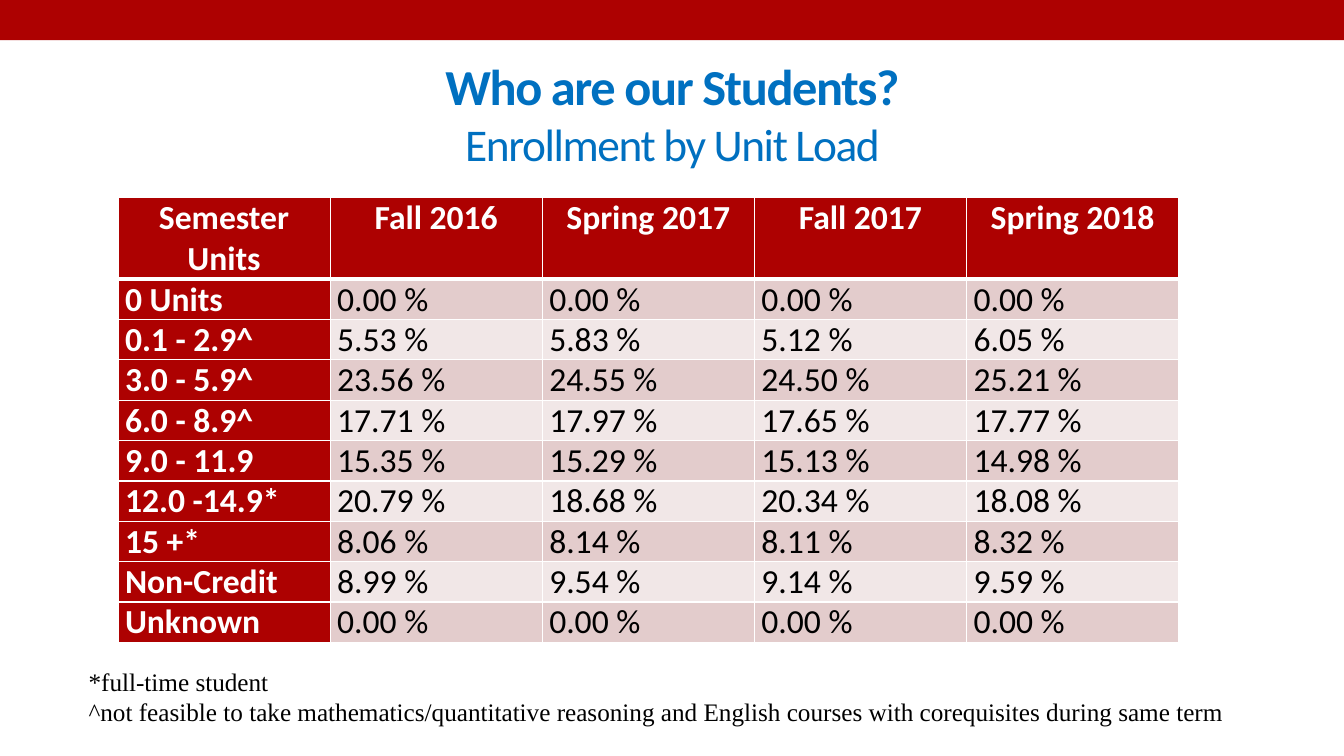
import pptx
import pptx.dml.color
import pptx.enum.shapes
import pptx.enum.text
import pptx.oxml.ns
import pptx.util
from lxml import etree

Inches = pptx.util.Inches
ALIGN = pptx.enum.text.PP_ALIGN
ANCHOR = pptx.enum.text.MSO_ANCHOR

RED, BLUE, WHITE, BLACK = "AD0101", "0070C0", "FFFFFF", "000000"
BANDS = ("E3CCCC", "F1E7E7")

HEADINGS = ("Semester Units", "Fall 2016", "Spring 2017", "Fall 2017", "Spring 2018")
UNIT_LOADS = (
    ("0 Units", 0.00, 0.00, 0.00, 0.00),
    ("0.1 - 2.9^", 5.53, 5.83, 5.12, 6.05),
    ("3.0 - 5.9^", 23.56, 24.55, 24.50, 25.21),
    ("6.0 - 8.9^", 17.71, 17.97, 17.65, 17.77),
    ("9.0 - 11.9", 15.35, 15.29, 15.13, 14.98),
    ("12.0 -14.9*", 20.79, 18.68, 20.34, 18.08),
    ("15 +*", 8.06, 8.14, 8.11, 8.32),
    ("Non-Credit", 8.99, 9.54, 9.14, 9.59),
    ("Unknown", 0.00, 0.00, 0.00, 0.00),
)
FOOTNOTES = (
    "*full-time student",
    "^not feasible to take mathematics/quantitative reasoning and English courses "
    "with corequisites during same term",
)


def paint(fill, color):
    """Give a fill one solid colour from a hex string."""
    fill.solid()
    fill.fore_color.rgb = pptx.dml.color.RGBColor.from_string(color)


def add_span(para, text, size=24, font="Calibri", color=BLACK, bold=False, spacing=0):
    """Add formatted text to a paragraph, with letter spacing in points."""
    span = para.add_run()
    span.text = text
    span.font.size = pptx.util.Pt(size)
    span.font.name = font
    span.font.bold = bold
    paint(span.font.fill, color)
    if spacing:
        span.font._element.set("spc", str(spacing * 100))


def add_box(page, left, top, width, height):
    """Add a wrapping text box and return its text frame."""
    box = page.shapes.add_textbox(Inches(left), Inches(top), Inches(width), Inches(height))
    box.text_frame.word_wrap = True
    return box.text_frame


def add_banner(page):
    """Draw the red band across the top of the page."""
    band = page.shapes.add_shape(
        pptx.enum.shapes.MSO_SHAPE.RECTANGLE, 0, 0, Inches(13.33), Inches(0.4)
    )
    band.shadow.inherit = False
    paint(band.fill, RED)
    band.line.fill.background()


def add_title(page):
    """Write the centred title and its subtitle."""
    frame = add_box(page, 0.67, 0.58, 12, 1.08)
    frame.vertical_anchor = ANCHOR.MIDDLE
    frame.margin_top = frame.margin_bottom = 0
    para = frame.paragraphs[0]
    para.alignment = ALIGN.CENTER
    add_span(para, "Who are our Students?", size=36, color=BLUE, bold=True, spacing=-1)
    para.add_line_break()
    add_span(para, "Enrollment by Unit Load", size=32.4, color=BLUE, spacing=-1)


def set_borders(cell, **widths):
    """Draw white cell borders, with widths in points keyed by side."""
    properties = cell._tc.get_or_add_tcPr()
    for side in "LRTB":
        width = pptx.util.Pt(widths.get(side, 1))
        line = etree.SubElement(properties, pptx.oxml.ns.qn(f"a:ln{side}"), w=str(width))
        fill = etree.SubElement(line, pptx.oxml.ns.qn("a:solidFill"))
        etree.SubElement(fill, pptx.oxml.ns.qn("a:srgbClr"), val=WHITE)


def fill_cell(cell, text, fill, align=ALIGN.LEFT, anchor=ANCHOR.MIDDLE, borders=None, **style):
    """Write one table cell with its borders, fill and text."""
    set_borders(cell, **(borders or {}))
    paint(cell.fill, fill)
    cell.margin_left = cell.margin_right = Inches(0.07)
    cell.margin_top = cell.margin_bottom = 0
    cell.vertical_anchor = anchor
    para = cell.text_frame.paragraphs[0]
    para.alignment = align
    add_span(para, text, **style)


def add_unit_table(page):
    """Build the table of enrollment shares by unit load and semester."""
    table = page.shapes.add_table(
        len(UNIT_LOADS) + 1, len(HEADINGS),
        Inches(1.17), Inches(1.96), Inches(10.52), Inches(4.44),
    ).table
    for row in table.rows:
        row.height = Inches(0.4)
    table.rows[0].height = Inches(0.81)
    for column, heading in enumerate(HEADINGS):
        fill_cell(table.cell(0, column), heading, RED, align=ALIGN.CENTER,
                  anchor=ANCHOR.TOP, borders={"B": 3}, color=WHITE, bold=True)
    for number, (load, *shares) in enumerate(UNIT_LOADS, 1):
        borders = {"T": 3 if number == 1 else 1}
        fill_cell(table.cell(number, 0), load, RED, borders=borders, color=WHITE, bold=True)
        for column, share in enumerate(shares, 1):
            fill_cell(table.cell(number, column), f"{share:.2f} %",
                      BANDS[(number - 1) % 2], borders=borders)


def add_footnotes(page):
    """Write the notes that explain the table's marks."""
    frame = add_box(page, 0.78, 6.56, 11.78, 0.71)
    for number, note in enumerate(FOOTNOTES):
        para = frame.add_paragraph() if number else frame.paragraphs[0]
        add_span(para, note, size=18, font="Times New Roman")


def main():
    """Build the deck and save it."""
    deck = pptx.Presentation()
    deck.slide_width, deck.slide_height = Inches(13.33), Inches(7.5)
    page = deck.slides.add_slide(deck.slide_layouts[6])
    add_banner(page)
    add_title(page)
    add_unit_table(page)
    add_footnotes(page)
    deck.save("out.pptx")


if __name__ == "__main__":
    main()
